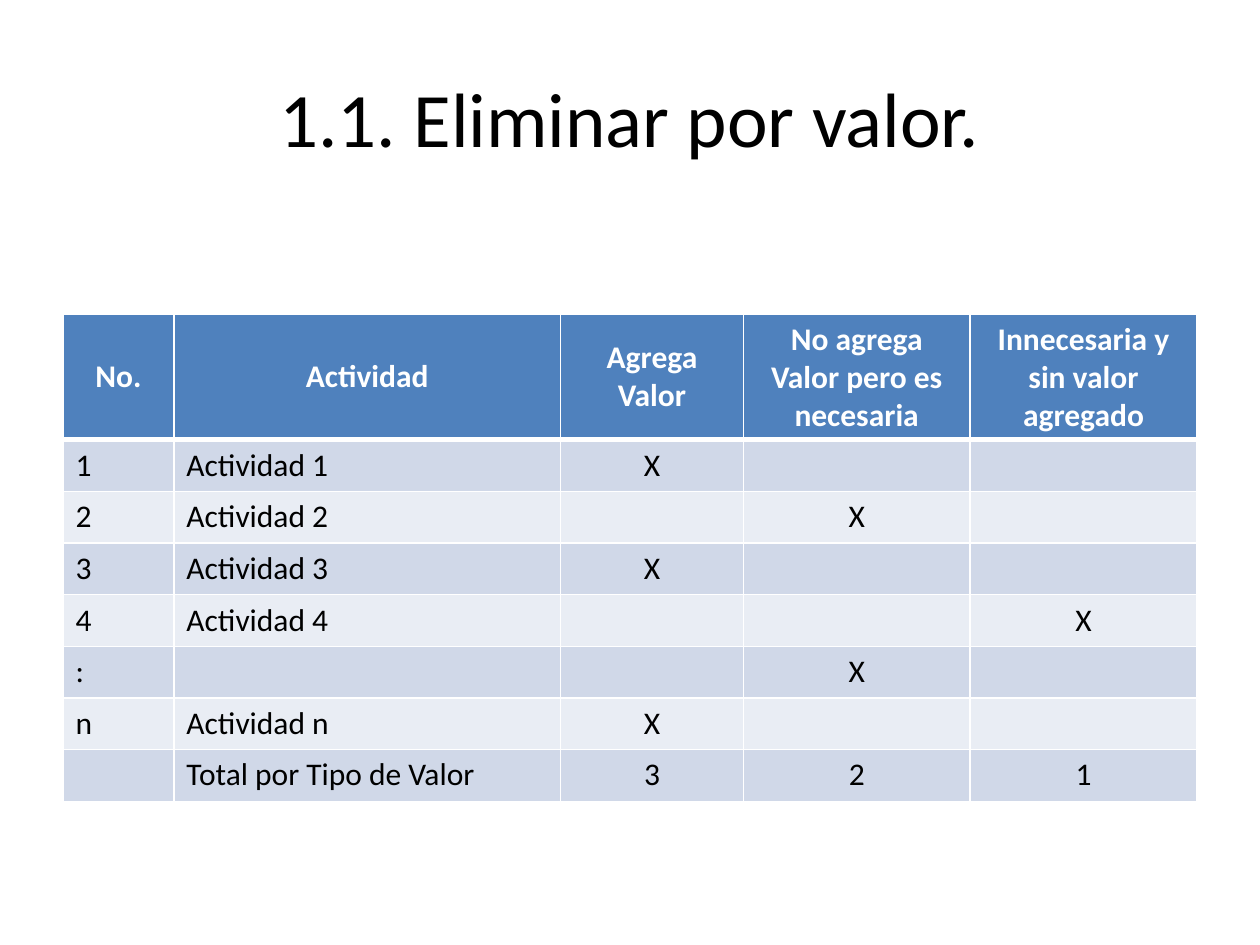
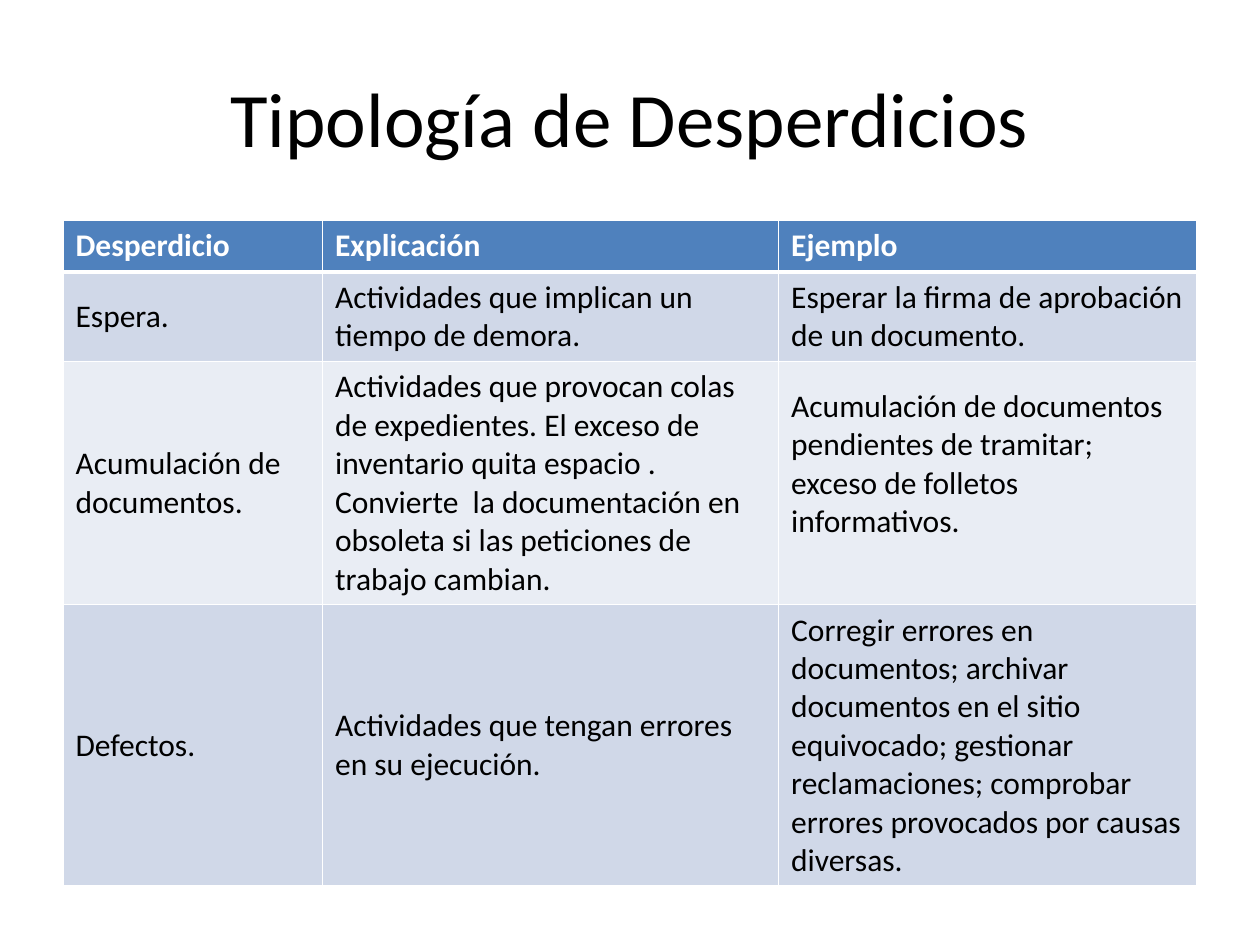
import pptx
import pptx.dml.color
import pptx.enum.text
import pptx.oxml
import pptx.oxml.ns
import pptx.util
from pptx.util import Inches

FONT = "Calibri"
COLORS = {
    "text": "000000",
    "white": "FFFFFF",
    "header": "4F81BD",
    "odd_row": "D0D8E8",
    "even_row": "E9EDF4",
}
LEFT, WIDTH = 0.5, 9
TITLE_BOX = (LEFT, 0.3, WIDTH, 1.25)
ALIGN = {
    "l": pptx.enum.text.PP_ALIGN.LEFT,
    "c": pptx.enum.text.PP_ALIGN.CENTER,
}
TOP = pptx.enum.text.MSO_ANCHOR.TOP
MIDDLE = pptx.enum.text.MSO_ANCHOR.MIDDLE

VALUE_ROWS = [
    ["No.", "Actividad", "Agrega Valor", "No agrega Valor pero es necesaria",
     "Innecesaria y sin valor agregado"],
    ["1", "Actividad 1", "X", "", ""],
    ["2", "Actividad 2", "", "X", ""],
    ["3", "Actividad 3", "X", "", ""],
    ["4", "Actividad 4", "", "", "X"],
    [":", "", "", "X", ""],
    ["n", "Actividad n", "X", "", ""],
    ["", "Total por Tipo de Valor", "3", "2", "1"],
]
WASTE_ROWS = [
    ["Desperdicio", "Explicación", "Ejemplo"],
    ["Espera.", "Actividades que implican un tiempo de demora.",
     "Esperar la firma de aprobación de un documento."],
    ["Acumulación de documentos.",
     "Actividades que provocan colas de expedientes. El exceso de inventario "
     "quita espacio . Convierte  la documentación en obsoleta si las "
     "peticiones de trabajo cambian.",
     "Acumulación de documentos pendientes de tramitar; exceso de folletos "
     "informativos."],
    ["Defectos.", "Actividades que tengan errores en su ejecución.",
     "Corregir errores en documentos; archivar documentos en el sitio "
     "equivocado; gestionar reclamaciones; comprobar errores provocados por "
     "causas diversas."],
]


def rgb(name):
    return pptx.dml.color.RGBColor.from_string(COLORS[name])


def write(frame, text, size, color, align, bold=False):
    frame.text = text
    paragraph = frame.paragraphs[0]
    paragraph.alignment = ALIGN[align]
    font = paragraph.font
    if paragraph.runs:
        font = paragraph.runs[0].font
    font.name, font.size, font.bold = FONT, pptx.util.Pt(size), bold
    font.color.rgb = rgb(color)


def add_title(slide, text, box):
    title = slide.shapes.add_textbox(*map(Inches, box))
    frame = title.text_frame
    frame.word_wrap = True
    frame.vertical_anchor = MIDDLE
    write(frame, text, 44, "text", "c")


def add_borders(cell, bottom_width, top_width):
    properties = cell._tc.get_or_add_tcPr()
    widths = {"lnL": 1, "lnR": 1, "lnT": top_width, "lnB": bottom_width}
    # Border lines come before the fill in the cell properties
    for position, (side, width) in enumerate(widths.items()):
        properties.insert(position, pptx.oxml.parse_xml(
            f'<a:{side} {pptx.oxml.ns.nsdecls("a")} w="{pptx.util.Pt(width)}">'
            f'<a:solidFill><a:srgbClr val="{COLORS["white"]}"/></a:solidFill>'
            f'</a:{side}>'))


def add_banded_table(slide, rows, top, widths, heights, header_style, body_style):
    """Each style is (vertical anchor, one alignment letter per column)."""
    table = slide.shapes.add_table(
        len(rows), len(widths), Inches(LEFT), Inches(top),
        Inches(WIDTH), Inches(sum(heights))).table
    for column, width in zip(table.columns, widths):
        column.width = Inches(width)
    for row, height in zip(table.rows, heights):
        row.height = Inches(height)

    for r, texts in enumerate(rows):
        is_header = r == 0
        anchor, aligns = header_style if is_header else body_style
        band = "header" if is_header else ("odd_row" if r % 2 else "even_row")
        for c, text in enumerate(texts):
            cell = table.cell(r, c)
            cell.fill.solid()
            cell.fill.fore_color.rgb = rgb(band)
            cell.vertical_anchor = anchor
            write(cell.text_frame, text, 18,
                  "white" if is_header else "text", aligns[c], is_header)
            add_borders(cell, 3 if is_header else 1, 3 if r == 1 else 1)
    return table


def build_value_slide(slide):
    add_title(slide, "1.1. Eliminar por valor.", TITLE_BOX)
    add_banded_table(slide, VALUE_ROWS, 2.49, [0.88, 3.07, 1.45, 1.8, 1.8],
                     [0.98] + [0.41] * 7, (MIDDLE, "ccccc"), (TOP, "llccc"))


def build_waste_slide(slide):
    add_title(slide, "Tipología de Desperdicios", TITLE_BOX)
    waste = add_banded_table(slide, WASTE_ROWS, 1.75, [2.06, 3.62, 3.32],
                             [0.41, 0.71, 1.93, 2.23], (TOP, "lll"),
                             (MIDDLE, "lll"))
    # The accumulation example sits half a line above the middle
    waste.cell(2, 2).margin_bottom = Inches(0.35)


def main():
    deck = pptx.Presentation()
    deck.slide_width, deck.slide_height = Inches(10), Inches(7.5)
    for build in (build_value_slide, build_waste_slide):
        build(deck.slides.add_slide(deck.slide_layouts[6]))
    deck.save("out.pptx")


if __name__ == "__main__":
    main()
